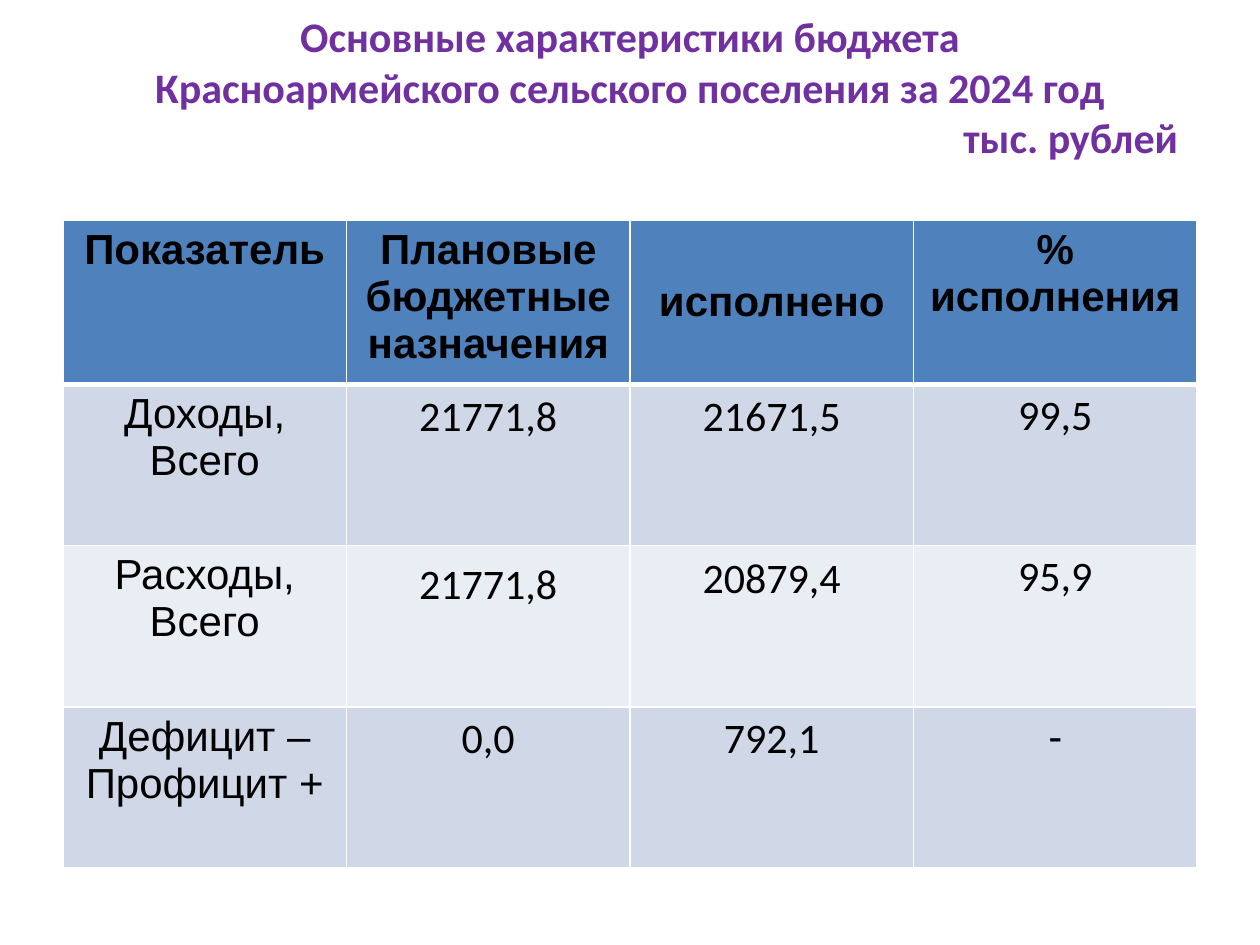
from dataclasses import dataclass

import pptx
import pptx.dml.color
import pptx.enum.text
import pptx.oxml
import pptx.oxml.ns
import pptx.util

Inches = pptx.util.Inches
Pt = pptx.util.Pt
RGBColor = pptx.dml.color.RGBColor
Align = pptx.enum.text.PP_ALIGN

PURPLE = RGBColor(0x70, 0x30, 0xA0)
BLACK = RGBColor(0, 0, 0)
WHITE = RGBColor(0xFF, 0xFF, 0xFF)
HEADER_BLUE = RGBColor(0x4F, 0x81, 0xBD)
BAND_DARK = RGBColor(0xD0, 0xD8, 0xE8)
BAND_LIGHT = RGBColor(0xE9, 0xED, 0xF4)
ROW_FILLS = [HEADER_BLUE, BAND_DARK, BAND_LIGHT, BAND_DARK]
TEXT_SIZE = Pt(24)


@dataclass
class Entry:
    lines: list[str]
    font: str = "Arial"
    spacing: float = 1.0
    top: float = 0.05


def value(text: str, spacing: float = 1.0, top: float = 0.05) -> Entry:
    return Entry([text], "Calibri", spacing, top)


BUDGET = [
    [
        Entry(["Показатель"]),
        Entry(["Плановые бюджетные назначения"]),
        Entry(["исполнено"], top=0.46),
        Entry(["%", "исполнения"]),
    ],
    [
        Entry(["Доходы,", "Всего"]),
        value("21771,8", 1.15, 0),
        value("21671,5", 1.15, 0),
        value("99,5"),
    ],
    [
        Entry(["Расходы,", "Всего"]),
        value("21771,8", 1.15),
        value("20879,4", 1.15, 0),
        value("95,9"),
    ],
    [
        Entry(["Дефицит –", "Профицит +"]),
        value("0,0"),
        value("792,1"),
        Entry(["-"]),
    ],
]

TITLE = [
    ("Основные характеристики бюджета", Align.CENTER),
    ("Красноармейского сельского поселения за 2024 год", Align.CENTER),
    ("тыс. рублей", Align.RIGHT),
]


def style_paragraph(para, text: str, font: str, color: RGBColor, bold: bool, align) -> None:
    para.text = text
    para.alignment = align
    para.font.name = font
    para.font.size = TEXT_SIZE
    para.font.bold = bold
    para.font.color.rgb = color


def add_title(page) -> None:
    box = page.shapes.add_textbox(Inches(0.5), Inches(0.3), Inches(9), Inches(1.18))
    frame = box.text_frame
    frame.word_wrap = True
    frame.vertical_anchor = pptx.enum.text.MSO_ANCHOR.MIDDLE
    frame.margin_left = frame.margin_right = Inches(0.15)
    frame.margin_top = 0
    frame.margin_bottom = Inches(0.41)
    for index, (text, align) in enumerate(TITLE):
        para = frame.add_paragraph() if index else frame.paragraphs[0]
        style_paragraph(para, text, "Calibri", PURPLE, True, align)


def set_borders(cell, row: int) -> None:
    widths = {"L": 1, "R": 1, "T": 3 if row == 1 else 1, "B": 3 if row == 0 else 1}
    properties = cell._tc.get_or_add_tcPr()
    for position, (side, width) in enumerate(widths.items()):
        line = pptx.oxml.parse_xml(
            f'<a:ln{side} {pptx.oxml.ns.nsdecls("a")} w="{Pt(width)}">'
            f'<a:solidFill><a:srgbClr val="{WHITE}"/></a:solidFill></a:ln{side}>'
        )
        properties.insert(position, line)


def fill_cell(cell, entry: Entry, row: int) -> None:
    cell.fill.solid()
    cell.fill.fore_color.rgb = ROW_FILLS[row]
    cell.margin_top = Inches(entry.top)
    frame = cell.text_frame
    for index, text in enumerate(entry.lines):
        para = frame.add_paragraph() if index else frame.paragraphs[0]
        style_paragraph(para, text, entry.font, BLACK, row == 0, Align.CENTER)
        para.line_spacing = entry.spacing
    set_borders(cell, row)


def add_budget_table(page) -> None:
    table = page.shapes.add_table(
        len(BUDGET), len(BUDGET[0]), Inches(0.5), Inches(1.75), Inches(9), Inches(5.12)
    ).table
    for row, entries in enumerate(BUDGET):
        for column, entry in enumerate(entries):
            fill_cell(table.cell(row, column), entry, row)


def main() -> None:
    deck = pptx.Presentation()
    deck.slide_width = Inches(10)
    deck.slide_height = Inches(7.5)
    page = deck.slides.add_slide(deck.slide_layouts[6])
    add_title(page)
    add_budget_table(page)
    deck.save("out.pptx")


if __name__ == "__main__":
    main()
